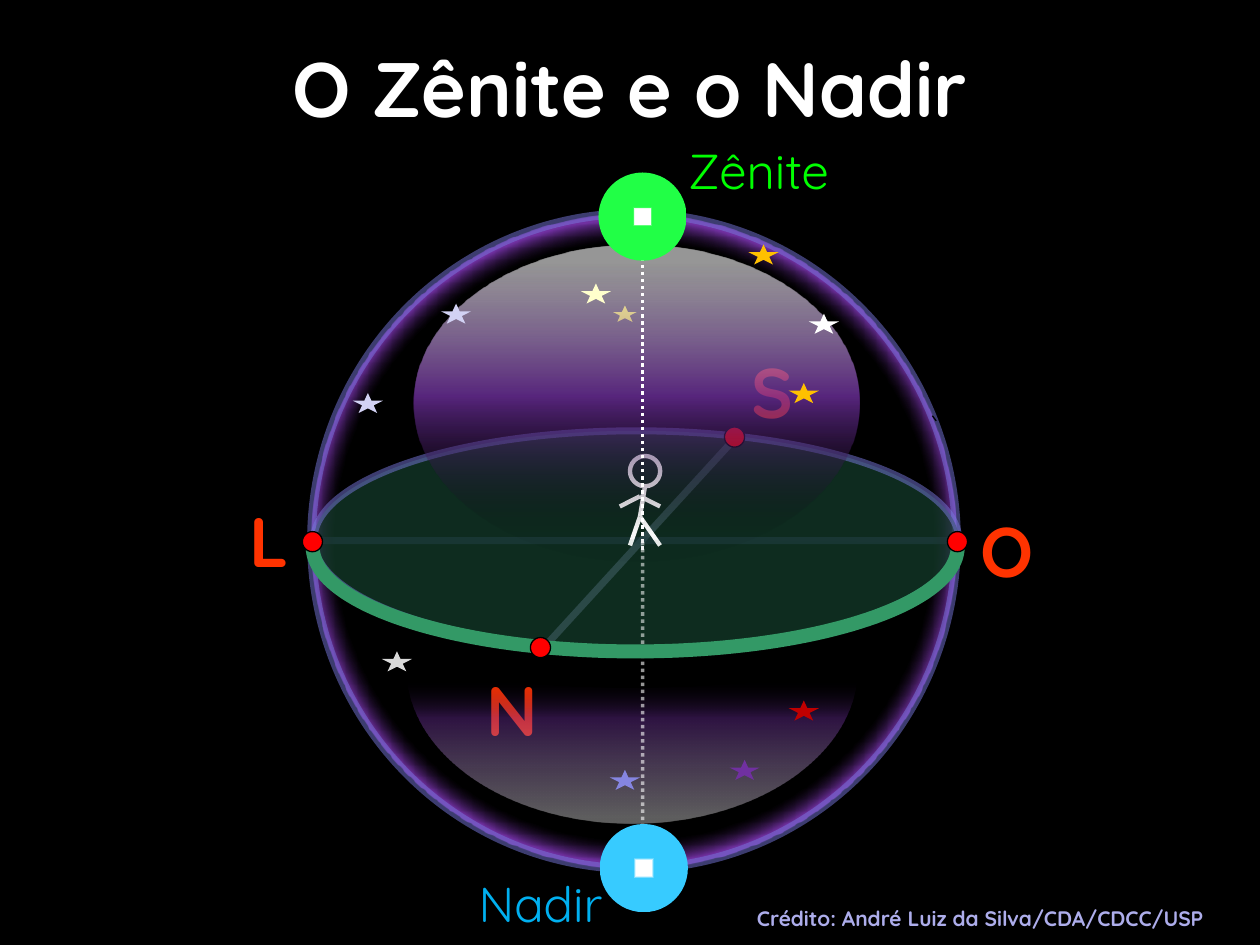
import math

import pptx
import pptx.dml.color
import pptx.enum.dml
import pptx.enum.shapes
import pptx.enum.text
import pptx.oxml
import pptx.oxml.ns
import pptx.util
from lxml import etree

Pt = pptx.util.Pt
SHAPE = pptx.enum.shapes.MSO_SHAPE
ALIGN = pptx.enum.text.PP_ALIGN
FONT = "Quicksand"
COLORS = {
    "sky": "000000", "white": "FFFFFF", "zenith_label": "00FF00", "nadir_label": "00B0F0",
    "credit": "ADADEB", "meridian": "A5A5E9", "rim": "7878DE", "violet": "7030A0",
    "cardinal": "FF3300", "cardinal_dot": "FF0000", "ground": "143C2B", "horizon": "339966",
    "zenith": "21FF46", "nadir": "37CBFF", "yellow": "FFFF00", "lilac": "D2D2F4",
    "amber": "FFC000", "cream": "FFFFCC", "crimson": "C00000", "periwinkle": "8585E0",
    "silver": "D9D9D9",
}
STAR_SIZE = (17.3, 11.5)
DOT = 11.5


def rgb(name):
    return pptx.dml.color.RGBColor.from_string(COLORS[name])


def set_alpha(fill_format_parent, alpha):
    """Give every solid colour below the element an opacity in percent."""
    for color in fill_format_parent.iter(pptx.oxml.ns.qn("a:srgbClr")):
        etree.SubElement(color, pptx.oxml.ns.qn("a:alpha")).set("val", str(alpha * 1000))


def style_line(line, color, width, alpha=100):
    line.color.rgb = rgb(color)
    line.width = Pt(width)
    if alpha < 100:
        set_alpha(line._get_or_add_ln(), alpha)


def style_shape(shape, fill=None, fill_alpha=100, line=None):
    """line is (color, width) or (color, width, alpha)."""
    shape.shadow.inherit = False
    if fill:
        shape.fill.solid()
        shape.fill.fore_color.rgb = rgb(fill)
        if fill_alpha < 100:
            set_alpha(shape._element.spPr, fill_alpha)
    else:
        shape.fill.background()
    if line:
        style_line(shape.line, *line)
    else:
        shape.line.fill.background()
    return shape


def add_shape(slide, kind, box, **style):
    return style_shape(slide.shapes.add_shape(kind, *map(Pt, box)), **style)


def set_gradient(shape, stops, angle=None, path_kind=None):
    """stops are (position %, color, opacity %)."""
    if path_kind:
        course = (f'<a:path path="{path_kind}"><a:fillToRect l="50000" t="50000" '
                  'r="50000" b="50000"/></a:path>')
    else:
        course = f'<a:lin ang="{angle * 60000}" scaled="0"/>'
    stop_xml = "".join(
        f'<a:gs pos="{pos * 1000}"><a:srgbClr val="{COLORS[color]}">'
        f'<a:alpha val="{alpha * 1000}"/></a:srgbClr></a:gs>'
        for pos, color, alpha in stops)
    gradient = pptx.oxml.parse_xml(
        f'<a:gradFill {pptx.oxml.ns.nsdecls("a")} rotWithShape="1">'
        f'<a:gsLst>{stop_xml}</a:gsLst>{course}</a:gradFill>')
    props = shape._element.spPr
    props.replace(props.find(pptx.oxml.ns.qn("a:noFill")), gradient)


def add_line(slide, start, end, color, width, alpha=100, dash=None):
    line = slide.shapes.add_connector(
        pptx.enum.shapes.MSO_CONNECTOR.STRAIGHT, *map(Pt, (*start, *end)))
    style_line(line.line, color, width, alpha)
    if dash:
        line.line.dash_style = dash
    etree.SubElement(line._element.spPr, pptx.oxml.ns.qn("a:effectLst"))


def add_text(slide, box, text, size, color, bold=False, align=ALIGN.LEFT, middle=False):
    frame = slide.shapes.add_textbox(*map(Pt, box)).text_frame
    frame.word_wrap = True
    if middle:
        frame.vertical_anchor = pptx.enum.text.MSO_ANCHOR.MIDDLE
    frame.paragraphs[0].alignment = align
    run = frame.paragraphs[0].add_run()
    run.text = text
    run.font.name, run.font.size, run.font.bold = FONT, Pt(size), bold
    run.font.color.rgb = rgb(color)


def draw_sphere(slide, box):
    left, top, width, height = box

    def at(x, y):
        return left + x, top + y

    def add_cardinal_dot(x, y):
        add_shape(slide, SHAPE.OVAL, (*at(x, y), DOT, DOT),
                  fill="cardinal_dot", line=("sky", 0.75))

    # Compass lines, then the celestial sphere over them
    add_line(slide, at(131, 250), at(244.6, 125.7), "meridian", 4)
    add_line(slide, at(2.7, 187), at(370.6, 187), "rim", 4, 50)
    sphere = add_shape(slide, SHAPE.OVAL, box, line=("rim", 5, 50))
    set_gradient(sphere, [(65, "sky", 30), (70, "violet", 100)], path_kind="circle")

    # Cardinal letters
    for letter, x, y in [("N", 92.7, 255.3), ("L", -42.6, 158.8),
                         ("S", 244.6, 73.8), ("O", 375, 164.6)]:
        add_text(slide, (*at(x, y), 28, 55.4), letter, 40, "cardinal", bold=True)

    # Ground disc, tick on the rim, observer
    add_shape(slide, SHAPE.OVAL, (*at(1.3, 124.2), width, 124.9),
              fill="ground", fill_alpha=73, line=("rim", 4, 50))
    add_line(slide, at(357, 118.5), at(354.8, 115.6), "sky", 0.75)
    add_shape(slide, SHAPE.STAR_5_POINT, (*at(170.5, 51.5), *STAR_SIZE),
              fill="yellow", line=("sky", 0.75))
    draw_observer(slide, (*at(176.2, 138.6), 23, 51.1))
    add_cardinal_dot(236, 122)

    # Shaded upper and lower domes
    upper_dome = add_shape(slide, SHAPE.OVAL, (*at(58.2, 17.7), 254.9, 181.4))
    set_gradient(upper_dome, [(6, "white", 58), (48, "violet", 77), (91, "sky", 2)], angle=90)
    lower_dome = add_shape(slide, SHAPE.MOON, (*at(138.8, 175.4), 88.6, 257.8))
    lower_dome.rotation = 270
    lower_dome.adjustments[0] = 0.875
    set_gradient(lower_dome, [(3, "white", 37), (68, "violet", 41), (94, "sky", 0)], angle=0)

    # Stars
    for x, y, color in [
            (23.6, 102.6, "lilac"), (74, 51.5, "lilac"), (272.7, 96.9, "amber"),
            (249.7, 17.7, "amber"), (284.2, 57.3, "white"), (153.9, 40, "cream"),
            (238.9, 312.2, "violet"), (272.7, 278.3, "crimson"),
            (170.5, 317.9, "periwinkle"), (40.2, 250.2, "silver")]:
        add_shape(slide, SHAPE.STAR_5_POINT, (*at(x, y), *STAR_SIZE), fill=color)

    # Vertical axis with its two poles
    dots = pptx.enum.dml.MSO_LINE.ROUND_DOT
    add_line(slide, at(189.2, 187.6), at(189.2, 369), "white", 2, 58, dots)
    add_line(slide, at(189.2, 1.1), at(189.2, 193.4), "white", 2, 100, dots)
    for color, x, y, edge in [("zenith", 164, -23.4, 21), ("nadir", 164.7, 348.9, 23)]:
        pole = add_shape(slide, SHAPE.OVAL, (*at(x, y), 50.4, 50.4))
        set_gradient(pole, [(18, "white", 100), (edge, color, 100)], path_kind="shape")

    # Near half of the horizon
    center_x, center_y = at(185, 190.5)
    points = [(Pt(center_x + width / 2 * math.cos(math.radians(angle))),
               Pt(center_y + 59.8 * math.sin(math.radians(angle))))
              for angle in range(-2, 187, 2)]
    outline = slide.shapes.build_freeform(*points[0])
    outline.add_line_segments(points[1:], close=False)
    style_shape(outline.convert_to_shape(), fill="ground", fill_alpha=7, line=("horizon", 8))
    for x, y in [(125.1, 242.3), (363.4, 181.8), (-5.2, 181.8)]:
        add_cardinal_dot(x, y)


def draw_observer(slide, box):
    left, top, width, height = box
    head, hip, shoulder = 17.3, (11.5, 34.6), (11.5, 23)
    add_shape(slide, SHAPE.OVAL, (left + 5.8, top, head, head), line=("white", 2.5))
    for start, end in [((14.4, head), hip), (hip, (width, height)), (hip, (5.8, height)),
                       (shoulder, (width, 28.8)), (shoulder, (0, 28.8))]:
        add_line(slide, (left + start[0], top + start[1]),
                 (left + end[0], top + end[1]), "white", 2.5)


def draw_captions(slide, box):
    left, top, width, height = box
    add_text(slide, (left + 371.5, top + 77, 123.8, 41), "Zênite", 28, "zenith_label",
             align=ALIGN.CENTER)
    add_text(slide, (left + 54, top + 4.3, width - 108, 90), "O Zênite e o Nadir", 44, "white",
             bold=True, align=ALIGN.CENTER, middle=True)
    add_text(slide, (left + 247, top + 495.4, 123.8, 41), "Nadir", 28, "nadir_label",
             align=ALIGN.CENTER)
    add_text(slide, (left + 425.5, top + 514.1, 292.3, 21.6),
             "Crédito: André Luiz da Silva/CDA/CDCC/USP", 12, "credit", bold=True)


def main():
    deck = pptx.Presentation()
    deck.slide_width, deck.slide_height = Pt(720), Pt(540)
    slide = deck.slides.add_slide(deck.slide_layouts[6])
    slide.background.fill.solid()
    slide.background.fill.fore_color.rgb = rgb("sky")
    draw_captions(slide, (0, 0, 720, 540))
    draw_sphere(slide, (178, 122, 368.6, 374.4))
    deck.save("out.pptx")


if __name__ == "__main__":
    main()
